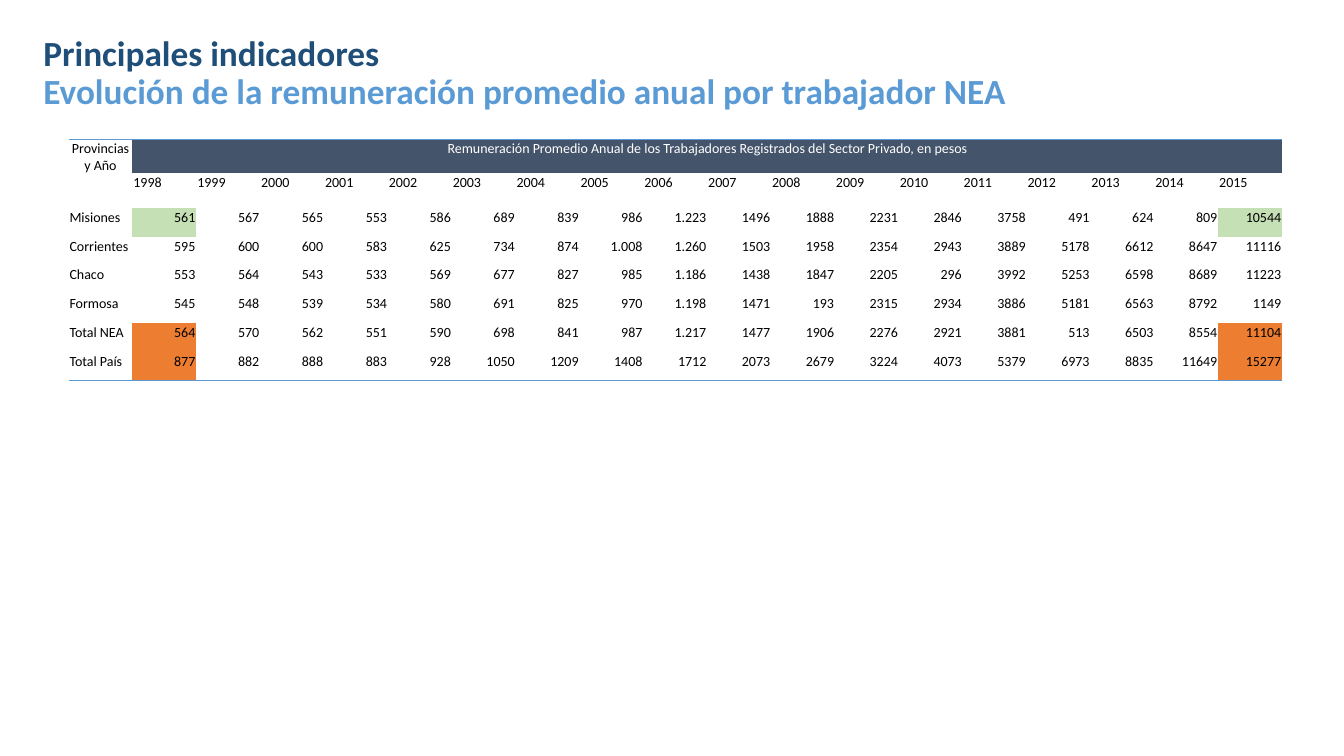
"""Build the slide on average yearly pay per worker in the NEA provinces."""
from copy import deepcopy

from lxml import etree
from pptx import Presentation
from pptx.dml.color import RGBColor
from pptx.enum.text import MSO_ANCHOR, MSO_AUTO_SIZE, PP_ALIGN
from pptx.oxml.ns import qn
from pptx.util import Inches, Pt

LEFT, CENTER, RIGHT = PP_ALIGN.LEFT, PP_ALIGN.CENTER, PP_ALIGN.RIGHT
BOTTOM, NO_FIT = MSO_ANCHOR.BOTTOM, MSO_AUTO_SIZE.NONE
PLAIN = "{2D5ABB26-0587-4C30-8999-92F81FD0307C}"
THEME = {
    "font": "Calibri", "title": 25.2, "cell": 10,
    "navy": "1F4E79", "blue": "5B9BD5", "slate": "44546A",
    "green": "C5E0B4", "orange": "ED7D31", "black": "000000", "white": "FFFFFF",
}
HEAD = "Remuneración Promedio Anual de los Trabajadores Registrados del Sector Privado, en pesos"
YEARS = [str(year) for year in range(1998, 2016)]
PAY = {
    "Misiones": "561 567 565 553 586 689 839 986 1.223 1496 1888 2231 2846 3758 491 624 809 10544",
    "Corrientes": "595 600 600 583 625 734 874 1.008 1.260 1503 1958 2354 2943 3889 5178 6612 8647 11116",
    "Chaco": "553 564 543 533 569 677 827 985 1.186 1438 1847 2205 296 3992 5253 6598 8689 11223",
    "Formosa": "545 548 539 534 580 691 825 970 1.198 1471 193 2315 2934 3886 5181 6563 8792 1149",
    "Total NEA": "564 570 562 551 590 698 841 987 1.217 1477 1906 2276 2921 3881 513 6503 8554 11104",
    "Total País": "877 882 888 883 928 1050 1209 1408 1712 2073 2679 3224 4073 5379 6973 8835 11649 15277",
}
MARKS = {"Misiones": "green", "Total NEA": "orange", "Total País": "orange"}


def style(run, size, color, bold=False):
    run.font.name = THEME["font"]
    run.font.size = Pt(THEME[size])
    run.font.bold = bold
    run.font.color.rgb = RGBColor.from_string(THEME[color])


def rule(cell, side):
    line = etree.Element(qn("a:" + side), w=str(Pt(1)))
    fill = etree.SubElement(line, qn("a:solidFill"))
    etree.SubElement(fill, qn("a:srgbClr"), val=THEME["blue"])
    cell._tc.get_or_add_tcPr().insert(0, line)


deck = Presentation()
deck.slide_width, deck.slide_height = Inches(13.33), Inches(7.5)
slide = deck.slides.add_slide(deck.slide_layouts[5])

title = slide.shapes.title
title.left, title.top = Inches(0.33), Inches(0.29)
title.width, title.height = Inches(12.38), Inches(0.87)
frame = title.text_frame
frame.text = "Principales indicadores\vEvolución de la remuneración promedio anual por trabajador NEA"
frame.auto_size, frame.vertical_anchor = NO_FIT, BOTTOM
lines = frame.paragraphs[0]
lines.alignment, lines.line_spacing = LEFT, 0.9
for run, color in zip(lines.runs, ("navy", "blue")):
    style(run, "title", color, True)
lines._p.find(qn("a:br")).append(deepcopy(lines.runs[0]._r.rPr))

rows = [["Provincias y Año", HEAD] + [""] * (len(YEARS) - 1), [""] + YEARS]
rows += [[place] + pay.split() for place, pay in PAY.items()]
last = len(YEARS)
grid = slide.shapes.add_table(
    len(rows), last + 1, Inches(0.68), Inches(1.38), Inches(12.04), Inches(2.39))
table = grid.table
table.first_row = table.horz_banding = False
table._tbl.tblPr.find(qn("a:tableStyleId")).text = PLAIN
for r, row in enumerate(rows):
    table.rows[r].height = Inches(0.34 if r < 2 else 0.285)
    for c, text in enumerate(row):
        cell = table.cell(r, c)
        cell.margin_left = cell.margin_right = cell.margin_top = Inches(0.01)
        cell.margin_bottom = 0
        cell.text = text
        para = cell.text_frame.paragraphs[0]
        para.alignment = CENTER if r == 0 else RIGHT if r > 1 and c else LEFT
        head = r == 0 and c > 0
        for run in para.runs:
            style(run, "cell", "white" if head else "black")
        mark = "slate" if head else MARKS.get(row[0]) if c in (1, last) else None
        if mark:
            cell.fill.solid()
            cell.fill.fore_color.rgb = RGBColor.from_string(THEME[mark])
        else:
            cell.fill.background()
        if r == 0:
            rule(cell, "lnT")
        elif r == len(rows) - 1:
            rule(cell, "lnB")
table.cell(0, 0).merge(table.cell(1, 0))
table.cell(0, 1).merge(table.cell(0, last))

deck.save("out.pptx")
